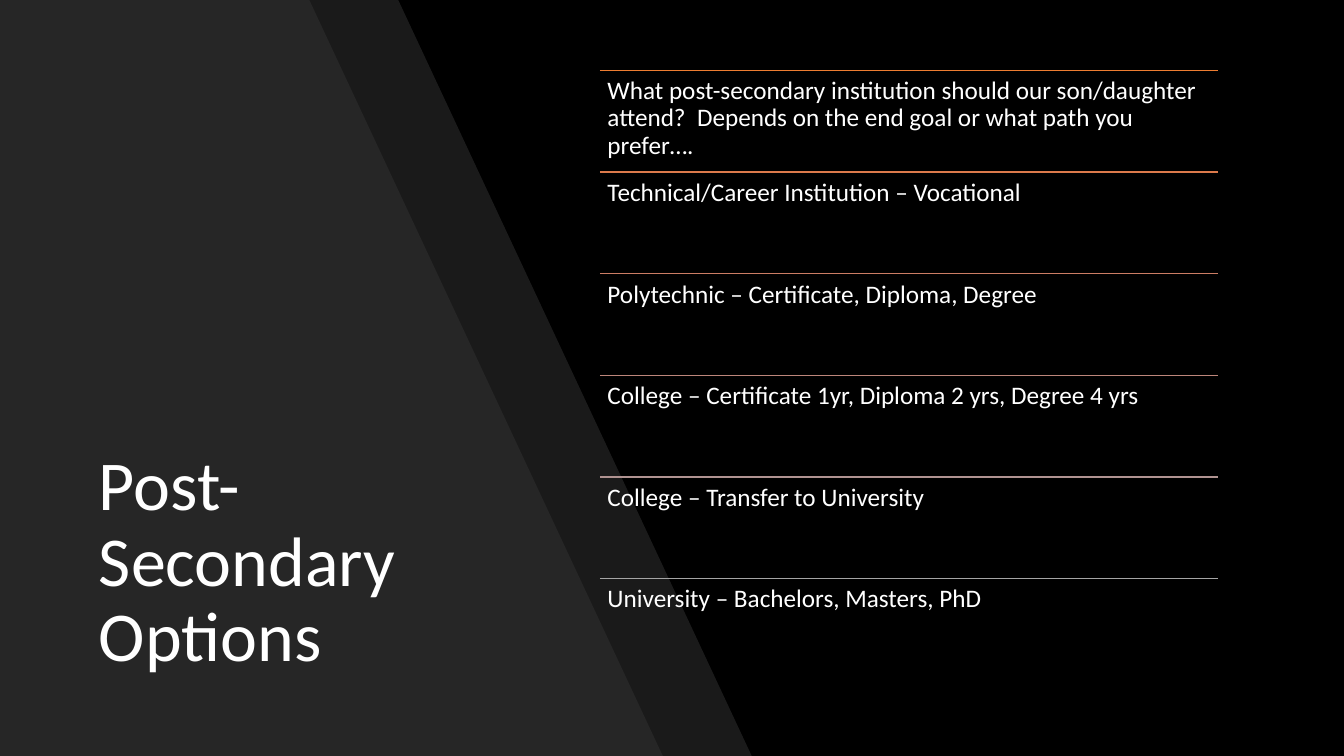
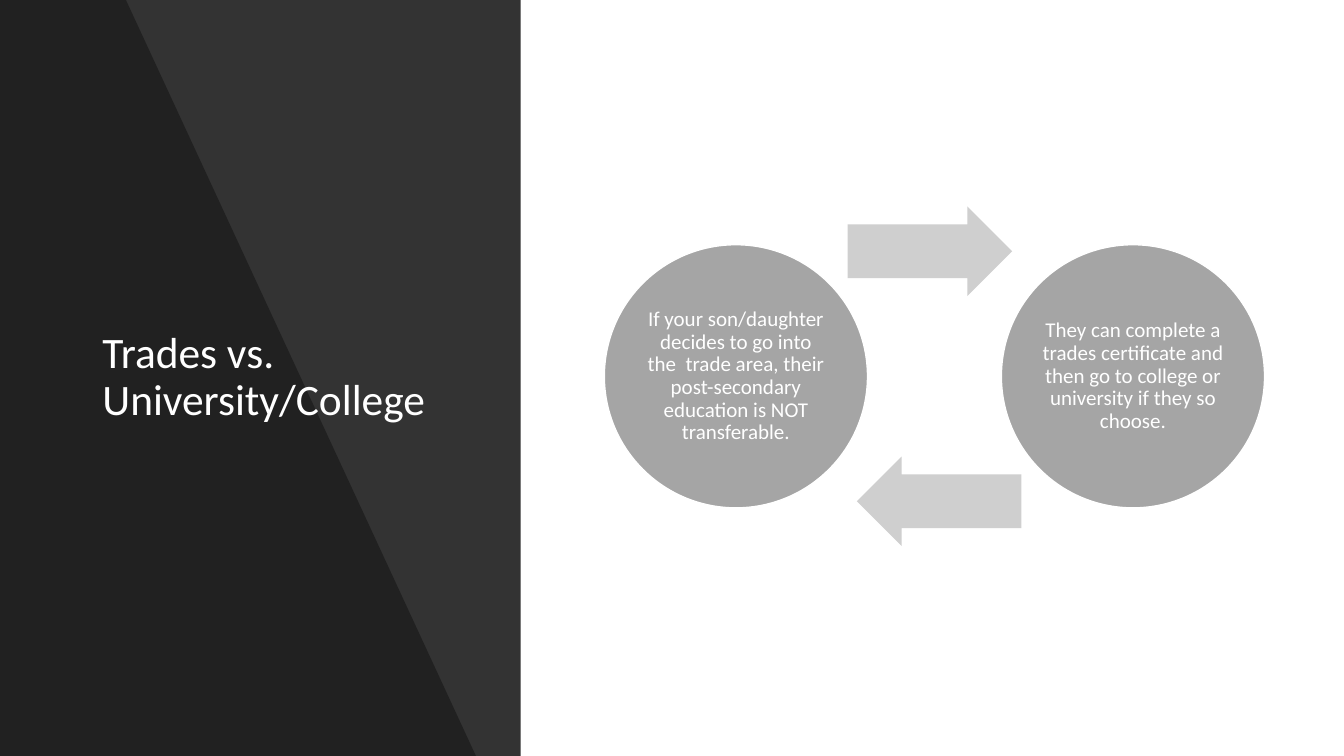
import pptx
import pptx.dml.color
import pptx.enum.shapes
import pptx.enum.text
import pptx.oxml
import pptx.oxml.ns
import pptx.util

Pt = pptx.util.Pt
RGBColor = pptx.dml.color.RGBColor
MSO_SHAPE = pptx.enum.shapes.MSO_SHAPE
ANCHOR = pptx.enum.text.MSO_ANCHOR
ALIGN = pptx.enum.text.PP_ALIGN

WIDTH, HEIGHT = 960, 540
FONT = "Calibri"
BLACK = RGBColor(0x00, 0x00, 0x00)
WHITE = RGBColor(0xFF, 0xFF, 0xFF)
CHARCOAL = RGBColor(0x26, 0x26, 0x26)
GRAY = RGBColor(0xA5, 0xA5, 0xA5)
LIGHT_GRAY = RGBColor(0xCF, 0xCF, 0xCF)

OPTIONS = [
    ("What post-secondary institution should our son/daughter attend?  "
     "Depends on the end goal or what path you prefer….", RGBColor(0xED, 0x7D, 0x31)),
    ("Technical/Career Institution – Vocational", RGBColor(0xDC, 0x7A, 0x4B)),
    ("Polytechnic – Certificate, Diploma, Degree", RGBColor(0xCC, 0x7D, 0x64)),
    ("College – Certificate 1yr, Diploma 2 yrs, Degree 4 yrs", RGBColor(0xBD, 0x86, 0x7B)),
    ("College – Transfer to University", RGBColor(0xB0, 0x93, 0x91)),
    ("University – Bachelors, Masters, PhD", GRAY),
]
PATHWAYS = [
    "If your son/daughter decides to go into the  trade area, "
    "their post-secondary education is NOT transferable.",
    "They can complete a trades certificate and then go to college "
    "or university if they so choose.",
]


def write_text(shape, text, size, anchor=ANCHOR.TOP, align=ALIGN.LEFT, inset=None, space_after=0):
    frame = shape.text_frame
    frame.word_wrap = True
    frame.auto_size = pptx.enum.text.MSO_AUTO_SIZE.NONE
    frame.vertical_anchor = anchor
    if inset is not None:
        frame.margin_left = frame.margin_right = Pt(inset)
        frame.margin_top = frame.margin_bottom = Pt(inset)
    paragraph = frame.paragraphs[0]
    paragraph.alignment = align
    paragraph.line_spacing = 0.9
    paragraph.space_before = Pt(0)
    paragraph.space_after = Pt(space_after)
    run = paragraph.add_run()
    run.text = text
    run.font.name = FONT
    run.font.size = Pt(size)
    run.font.color.rgb = WHITE


def style_shape(shape, fill, opacity=100, line=None):
    shape.shadow.inherit = False
    shape.fill.solid()
    shape.fill.fore_color.rgb = fill
    if opacity < 100:
        color = shape.fill._xPr.find(".//" + pptx.oxml.ns.qn("a:srgbClr"))
        alpha = pptx.oxml.ns.qn("a:alpha")
        color.append(color.makeelement(alpha, {"val": str(opacity * 1000)}))
    if line is None:
        shape.line.fill.background()
    else:
        shape.line.color.rgb = line
        shape.line.width = Pt(1)


def add_titled_slide(presentation, background, title, box, size, anchor):
    slide = presentation.slides.add_slide(presentation.slide_layouts[5])
    slide.background.fill.solid()
    slide.background.fill.fore_color.rgb = background
    placeholder = slide.shapes.title
    placeholder.left, placeholder.top, placeholder.width, placeholder.height = map(Pt, box)
    write_text(placeholder, title, size, anchor)
    return slide


def send_to_back(slide, shapes):
    title = slide.shapes.title._element
    for shape in shapes:
        title.addprevious(shape._element)


def add_slanted_panel(slide, top_width, bottom_width, fill, opacity=100):
    builder = slide.shapes.build_freeform(0, 0)
    corners = [(top_width, 0), (bottom_width, HEIGHT), (0, HEIGHT)]
    builder.add_line_segments([(Pt(x), Pt(y)) for x, y in corners], close=True)
    panel = builder.convert_to_shape()
    style_shape(panel, fill, opacity)
    return panel


def add_rule(slide, left, top, width, color):
    rule = slide.shapes.add_connector(
        pptx.enum.shapes.MSO_CONNECTOR.STRAIGHT, Pt(left), Pt(top), Pt(left + width), Pt(top))
    rule.line.color.rgb = color
    rule.line.width = Pt(1)
    properties = rule._element.spPr
    properties.append(properties.makeelement(pptx.oxml.ns.qn("a:effectLst"), {}))


def add_option_row(slide, left, top, width, height, text, color):
    add_rule(slide, left, top, width, color)
    box = slide.shapes.add_textbox(Pt(left), Pt(top), Pt(width), Pt(height))
    write_text(box, text, 18, inset=5.4, space_after=6.3)


def add_centered_shape(slide, kind, center_x, center_y, width, height):
    return slide.shapes.add_shape(
        kind, Pt(center_x - width / 2), Pt(center_y - height / 2), Pt(width), Pt(height))


def add_circle(slide, center_x, center_y, diameter, text):
    circle = add_centered_shape(slide, MSO_SHAPE.OVAL, center_x, center_y, diameter, diameter)
    style_shape(circle, GRAY, line=WHITE)
    write_text(circle, text, 15, ANCHOR.MIDDLE, ALIGN.CENTER, 1.5, 5.25)


def add_arrow(slide, center_x, center_y, rotation):
    arrow = add_centered_shape(slide, MSO_SHAPE.RIGHT_ARROW, center_x, center_y, 117.5, 64)
    arrow.adjustments[0] = 0.6
    arrow.adjustments[1] = 0.5
    arrow.rotation = rotation
    style_shape(arrow, LIGHT_GRAY)


def build_options_slide(presentation):
    slide = add_titled_slide(
        presentation, BLACK, "Post-Secondary Options", (63.5, 318, 305, 171.5), 50, ANCHOR.TOP)
    send_to_back(slide, [
        add_slanted_panel(slide, 284.5, 537, CHARCOAL, 70),
        add_slanted_panel(slide, 221, 473.5, CHARCOAL),
    ])
    row_height = 72.6
    for index, (text, color) in enumerate(OPTIONS):
        add_option_row(slide, 428.5, 50.3 + index * row_height, 441.5, row_height, text, color)


def build_pathways_slide(presentation):
    slide = add_titled_slide(
        presentation, WHITE, "Trades vs. University/College", (66, 150.5, 258, 238.5), 31,
        ANCHOR.MIDDLE)
    band = slide.shapes.add_shape(MSO_SHAPE.RECTANGLE, 0, 0, Pt(372), Pt(HEIGHT))
    style_shape(band, BLACK, 80)
    send_to_back(slide, [band, add_slanted_panel(slide, 90, 340, BLACK, 35)])
    center_x, center_y = 667.5, 268.8
    for side, text, rotation in zip((-1, 1), PATHWAYS, (0, 180)):
        add_circle(slide, center_x + side * 141.8, center_y, 188, text)
        add_arrow(slide, center_x + side * 3.3, center_y + side * 89.3, rotation)


def main():
    presentation = pptx.Presentation()
    presentation.slide_width = Pt(WIDTH)
    presentation.slide_height = Pt(HEIGHT)
    build_options_slide(presentation)
    build_pathways_slide(presentation)
    presentation.save("out.pptx")


if __name__ == "__main__":
    main()
